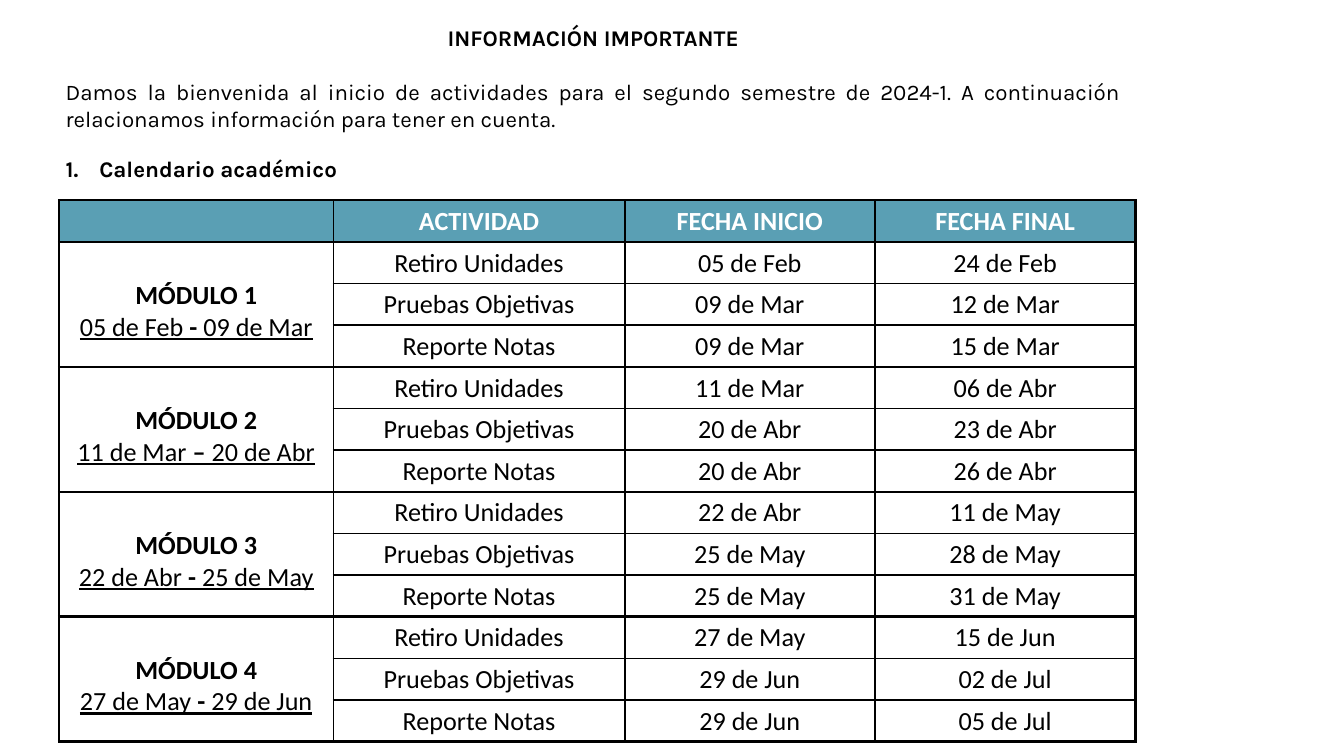
from lxml import etree
from pptx import Presentation
from pptx import util as u
from pptx.dml.color import RGBColor
from pptx.enum import text
from pptx.oxml import ns

BLACK = RGBColor(0x00, 0x00, 0x00)
WHITE = RGBColor(0xFF, 0xFF, 0xFF)
TEAL = RGBColor(0x5A, 0x9F, 0xB4)

HEADERS = ["", "ACTIVIDAD", "FECHA INICIO", "FECHA FINAL"]
ACTIVITIES = ["Retiro Unidades", "Pruebas Objetivas", "Reporte Notas"]
MODULES = [
    ("05 de Feb", "-", "09 de Mar",
     [("05 de Feb", "24 de Feb"), ("09 de Mar", "12 de Mar"), ("09 de Mar", "15 de Mar")]),
    ("11 de Mar", "–", "20 de Abr",
     [("11 de Mar", "06 de Abr"), ("20 de Abr", "23 de Abr"), ("20 de Abr", "26 de Abr")]),
    ("22 de Abr", "-", "25 de May",
     [("22 de Abr", "11 de May"), ("25 de May", "28 de May"), ("25 de May", "31 de May")]),
    ("27 de May", "-", "29 de Jun",
     [("27 de May", "15 de Jun"), ("29 de Jun", "02 de Jul"), ("29 de Jun", "05 de Jul")]),
]


def add_run(p, words, font, size, color=BLACK, bold=False, underline=False):
    r = p.add_run()
    r.text = words
    r.font.name = font
    r.font.size = u.Pt(size)
    r.font.color.rgb = color
    r.font.bold = bold
    r.font.underline = underline


def add_border(cell, side, points):
    ln = etree.SubElement(cell._tc.get_or_add_tcPr(), ns.qn("a:" + side), w=str(u.Pt(points)))
    fill = etree.SubElement(ln, ns.qn("a:solidFill"))
    etree.SubElement(fill, ns.qn("a:srgbClr"), val=str(BLACK))


prs = Presentation()
prs.slide_width = u.Inches(10)
prs.slide_height = u.Inches(10) * 9 // 16
s = prs.slides.add_slide(prs.slide_layouts[6])

sp = s.shapes.add_textbox(u.Inches(0.39), u.Inches(0.13), u.Inches(8.05), u.Inches(1.31))
tf = sp.text_frame
tf.word_wrap = True

p = tf.paragraphs[0]
p.alignment = text.PP_ALIGN.CENTER
add_run(p, "INFORMACIÓN IMPORTANTE", "Karla", 12, bold=True)

p = tf.add_paragraph()
p.alignment = text.PP_ALIGN.JUSTIFY
p.space_before = u.Pt(14.5)
add_run(p, "Damos la bienvenida al inicio de actividades para el segundo semestre de 2024-1. "
           "A continuación relacionamos información para tener en cuenta.", "Karla", 12)

p = tf.add_paragraph()
p.alignment = text.PP_ALIGN.JUSTIFY
p.space_before = u.Pt(12.5)
pPr = p._p.get_or_add_pPr()
pPr.set("marL", str(u.Inches(0.25)))
pPr.set("indent", str(-u.Inches(0.25)))
etree.SubElement(pPr, ns.qn("a:buFont"), typeface="+mj-lt")
etree.SubElement(pPr, ns.qn("a:buAutoNum"), type="arabicPeriod")
add_run(p, "Calendario académico", "Karla", 12, bold=True)

rows = 1 + len(MODULES) * len(ACTIVITIES)
sp = s.shapes.add_table(rows, 4, u.Inches(0.44), u.Inches(1.49), u.Inches(8.01), u.Inches(0.31 * rows))
table = sp.table
table.first_row = False
table.horz_banding = False
for column, width in zip(table.columns, [2.04, 2.17, 1.86, 1.94]):
    column.width = u.Inches(width)
for row in table.rows:
    row.height = u.Inches(0.31)

for i in range(rows):
    for j in range(4):
        cell = table.cell(i, j)
        cell.margin_left = cell.margin_right = u.Inches(0.08)
        cell.margin_top = u.Inches(0.04)
        cell.margin_bottom = u.Inches(0.03)
        add_border(cell, "lnL", 1.5 if j == 0 else 1)
        add_border(cell, "lnR", 1.5 if j == 3 else 1)
        add_border(cell, "lnT", 1.5 if j == 0 or i == 0 or i % 3 == 1 else 1)
        add_border(cell, "lnB", 1.5 if j == 0 or i % 3 == 0 else 1)
        p = cell.text_frame.paragraphs[0]
        p.alignment = text.PP_ALIGN.CENTER
        p._p.get_or_add_endParaRPr().set("sz", "1400")
        if i == 0:
            cell.fill.solid()
            cell.fill.fore_color.rgb = TEAL
            if HEADERS[j]:
                add_run(p, HEADERS[j], "Calibri", 14, WHITE, bold=True)
        else:
            cell.fill.background()
            if j > 0:
                module, k = divmod(i - 1, 3)
                values = (ACTIVITIES[k], *MODULES[module][3][k])
                add_run(p, values[j - 1], "Calibri", 14)

for n, (start, dash, end, dates) in enumerate(MODULES):
    cell = table.cell(3 * n + 1, 0)
    cell.merge(table.cell(3 * n + 3, 0))
    cell.margin_top = u.Inches(0.28)
    tf = cell.text_frame
    add_run(tf.paragraphs[0], f"MÓDULO {n + 1}", "Calibri", 14, bold=True)
    p = tf.add_paragraph()
    p.alignment = text.PP_ALIGN.CENTER
    add_run(p, start + " ", "Calibri", 14, underline=True)
    add_run(p, dash, "Calibri", 14, bold=True, underline=True)
    add_run(p, " " + end, "Calibri", 14, underline=True)

prs.save("out.pptx")
